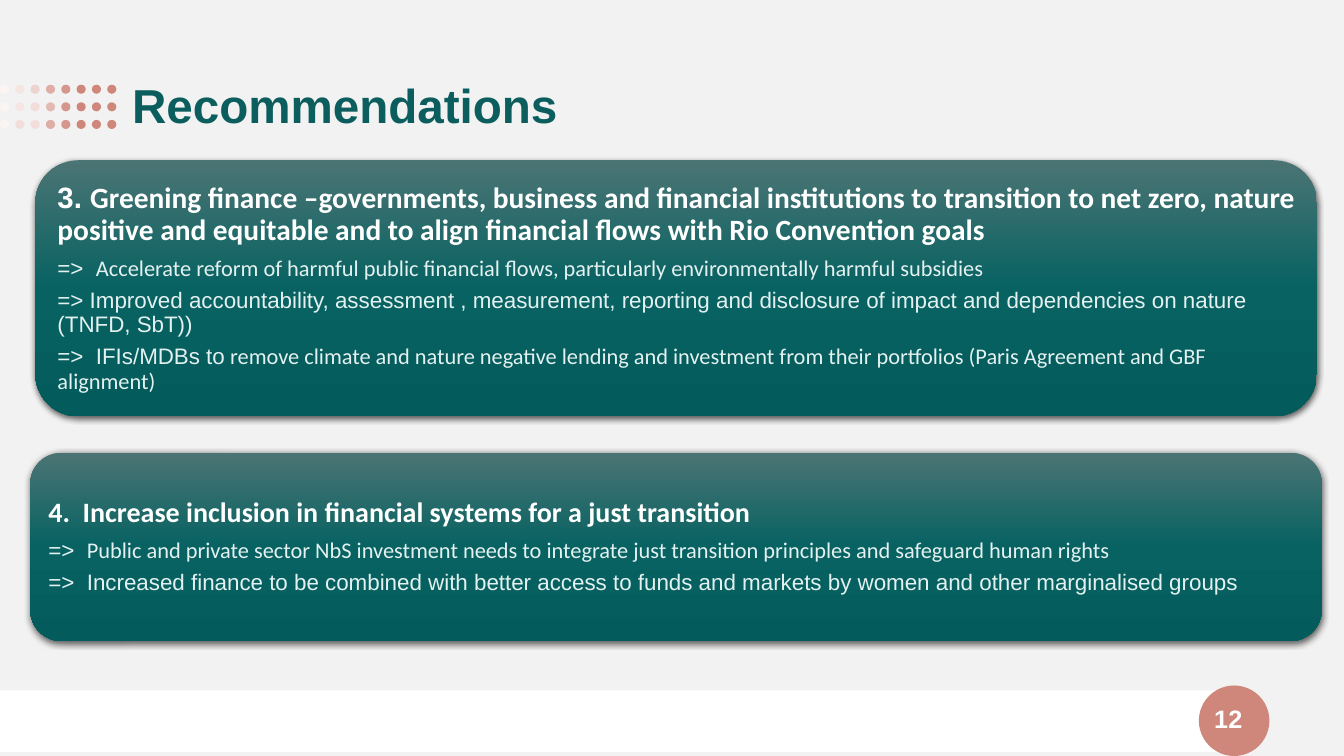
import copy

import pptx
import pptx.dml.color
import pptx.enum.shapes
import pptx.enum.text
import pptx.oxml
import pptx.oxml.ns
import pptx.util

SLIDE_WIDTH = pptx.util.Inches(13.33)
SLIDE_HEIGHT = pptx.util.Inches(7.5)
TWO_CONTENT_LAYOUT = 3
SHAPES = pptx.enum.shapes.MSO_SHAPE
ALIGN = pptx.enum.text.PP_ALIGN

COLORS = {
    "background": "F2F2F2", "white": "FFFFFF", "title": "0C5E5E", "item": "E3F1F0",
    "panel top": "4B7474", "panel middle": "086262", "panel bottom": "035B5B",
    "coral": "CE877A", "coral 90": "D5968B", "coral 70": "DEAEA6", "coral 60": "E3BAB3",
    "coral 40": "EDD3CF", "coral 30": "F2DDDA", "coral 20": "F5E5E3", "coral 10": "FBF4F3",
}

DOT_FADES = [
    ["coral 10", "coral 20", "coral 40", "coral 70", "coral 90"],
    ["coral 10", "coral 20", "coral 30", "coral 60", "coral 90"],
    ["coral 10", "coral 30", "coral 30", "coral 70", "coral 90"],
]
SOLID_DOTS = 3

# Each paragraph is a list of (text, font) runs; the first one is the heading.
FINANCE = [
    [("3. ", "Arial"),
     ("Greening finance –governments, business and financial institutions to transition to "
      "net zero, nature positive and equitable and to align financial flows with Rio "
      "Convention goals", "Calibri")],
    [("=>  ", "Arial"),
     ("Accelerate reform of harmful public financial flows, particularly environmentally "
      "harmful subsidies", "Calibri")],
    [("=> Improved accountability, assessment , measurement, reporting and disclosure of "
      "impact and dependencies on nature (TNFD, SbT))", "Arial")],
    [("=>  IFIs/MDBs to", "Arial"),
     (" remove climate and nature negative lending and investment from their portfolios "
      "(Paris Agreement and GBF alignment)", "Calibri")],
]
INCLUSION = [
    [("4.  Increase inclusion in financial systems for a just transition", "Calibri")],
    [("=>  ", "Arial"),
     ("Public and private sector NbS investment needs to integrate just transition "
      "principles and safeguard human rights", "Calibri")],
    [("=>  Increased finance to be combined with better access to funds and markets by "
      "women and other marginalised groups", "Arial")],
]


def rgb(name):
    return pptx.dml.color.RGBColor.from_string(COLORS[name])


def box(left, top, width, height):
    """Turn percentages of the slide's width and height into lengths."""
    return (int(SLIDE_WIDTH * left / 100), int(SLIDE_HEIGHT * top / 100),
            int(SLIDE_WIDTH * width / 100), int(SLIDE_HEIGHT * height / 100))


def move(shape, area):
    shape.left, shape.top, shape.width, shape.height = box(*area)


def add_plain_shape(slide, kind, area, color):
    shape = slide.shapes.add_shape(kind, *box(*area))
    shape.shadow.inherit = False
    shape.fill.solid()
    shape.fill.fore_color.rgb = rgb(color)
    shape.line.fill.background()
    return shape


def add_dots(slide):
    for row, fade in enumerate(DOT_FADES):
        for column, color in enumerate(fade + ["coral"] * SOLID_DOTS):
            area = (1.14 * column, 11.2 + 2.33 * row, 0.68, 1.2)
            add_plain_shape(slide, SHAPES.OVAL, area, color)


def add_panel(slide, area):
    """Add a rounded panel with a vertical gradient and a soft shadow."""
    panel = add_plain_shape(slide, SHAPES.ROUNDED_RECTANGLE, area, "panel middle")
    panel.fill.gradient()
    panel.fill.gradient_angle = 270
    properties = panel._element.spPr
    stop_list = properties.find(".//" + pptx.oxml.ns.qn("a:gsLst"))
    stop_list.append(copy.deepcopy(stop_list[-1]))
    names = ["panel top", "panel middle", "panel bottom"]
    for stop, name, position in zip(panel.fill.gradient_stops, names, [0, 0.5, 1]):
        stop.color.rgb = rgb(name)
        stop.position = position
    effects = properties.find(pptx.oxml.ns.qn("a:effectLst"))
    effects.append(pptx.oxml.parse_xml(
        f'<a:outerShdw {pptx.oxml.ns.nsdecls("a")} blurRad="57150" dist="19050" '
        'dir="5400000" algn="ctr" rotWithShape="0"><a:srgbClr val="000000">'
        '<a:alpha val="63000"/></a:srgbClr></a:outerShdw>'))


def prepare_frame(shape):
    frame = shape.text_frame
    frame.word_wrap = True
    frame.auto_size = pptx.enum.text.MSO_AUTO_SIZE.NONE
    frame.vertical_anchor = pptx.enum.text.MSO_ANCHOR.MIDDLE
    return frame


def format_paragraph(paragraph, alignment, space_after):
    paragraph.alignment = alignment
    paragraph.line_spacing = 0.9
    paragraph.space_before = pptx.util.Pt(0)
    paragraph.space_after = pptx.util.Pt(space_after)


def format_run(run, font, size, color, bold):
    run.font.name = font
    run.font.size = pptx.util.Pt(size)
    run.font.color.rgb = rgb(color)
    run.font.bold = bold


def write_line(shape, text, size, color, alignment, space_after=0):
    frame = prepare_frame(shape)
    frame.text = text
    format_paragraph(frame.paragraphs[0], alignment, space_after)
    format_run(frame.paragraphs[0].runs[0], "Arial", size, color, True)


def remove_bullet(paragraph):
    properties = paragraph._p.get_or_add_pPr()
    properties.set("marL", "0")
    properties.set("indent", "0")
    properties.append(pptx.oxml.parse_xml(f'<a:buNone {pptx.oxml.ns.nsdecls("a")}/>'))


def write_recommendation(slide, body, area, paragraphs, heading_size, inset):
    """Fill a body placeholder and bring it in front of its panel."""
    move(body, area)
    slide.shapes._spTree.append(body._element)
    frame = prepare_frame(body)
    frame.margin_left = frame.margin_right = pptx.util.Inches(inset)
    frame.margin_top = frame.margin_bottom = pptx.util.Inches(inset)
    for index, runs in enumerate(paragraphs):
        heading = index == 0
        size = heading_size if heading else 16
        paragraph = frame.paragraphs[0] if heading else frame.add_paragraph()
        format_paragraph(paragraph, ALIGN.LEFT, 0.35 * size)
        remove_bullet(paragraph)
        for text, font in runs:
            run = paragraph.add_run()
            run.text = text
            format_run(run, font, size, "white" if heading else "item", heading)


def main():
    presentation = pptx.Presentation()
    presentation.slide_width = SLIDE_WIDTH
    presentation.slide_height = SLIDE_HEIGHT
    slide = presentation.slides.add_slide(presentation.slide_layouts[TWO_CONTENT_LAYOUT])
    slide.background.fill.solid()
    slide.background.fill.fore_color.rgb = rgb("background")
    title, finance, inclusion = slide.placeholders

    add_plain_shape(slide, SHAPES.RECTANGLE, (0, 91.33, 91.82, 8.13), "white")
    add_plain_shape(slide, SHAPES.OVAL, (89.2, 90.67, 5.25, 9.33), "coral")
    add_dots(slide)

    move(title, (9.08, 4.67, 86.65, 19.33))
    write_line(title, "Recommendations", 34, "title", ALIGN.LEFT)

    add_panel(slide, (2.63, 21.2, 95.35, 33.87))
    write_recommendation(slide, finance, (3.6, 22.93, 93.47, 30.53), FINANCE, 21, 0.09)
    add_panel(slide, (2.25, 59.87, 96.1, 24.93))
    write_recommendation(slide, inclusion, (3, 61.07, 94.67, 22.53), INCLUSION, 20, 0.08)

    page_number = slide.shapes.add_textbox(*box(70.67, 92.67, 22.5, 5.33))
    write_line(page_number, "12", 18, "white", ALIGN.RIGHT, space_after=6)
    presentation.save("out.pptx")


if __name__ == "__main__":
    main()
